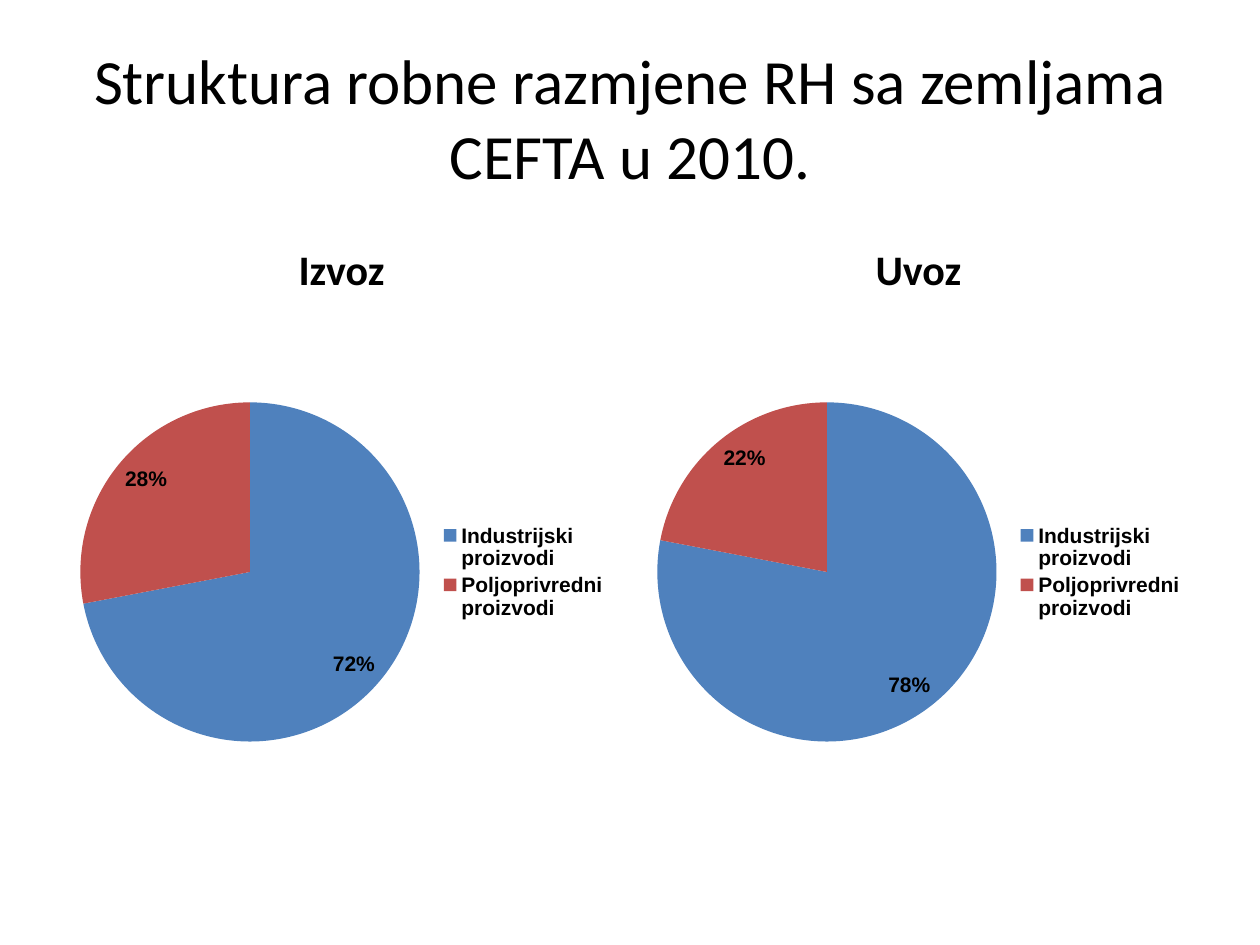
import pptx
import pptx.chart.data
import pptx.dml.color
import pptx.enum.chart
import pptx.enum.text
import pptx.util

PX = 914400 // 126
LEFT, COLUMN_W, COLUMN_STEP = 63, 557, 577
CATEGORIES = ["Industrijski proizvodi", "Poljoprivredni proizvodi"]
SLICE_COLORS = ["4F81BD", "C0504D"]
COLUMNS = [("Izvoz", (72, 28)), ("Uvoz", (78, 22))]


def px(*lengths):
    return [pptx.util.Emu(n * PX) for n in lengths]


def rgb(value):
    return pptx.dml.color.RGBColor.from_string(value)


def style_font(font, name, size, bold=False):
    font.name = name
    font.size = pptx.util.Pt(size)
    font.bold = bold
    font.color.rgb = rgb("000000")


def fill_placeholder(sp, box, text, size, anchor, bold=False):
    sp.left, sp.top, sp.width, sp.height = px(*box)
    tf = sp.text_frame
    tf.text = text
    tf.vertical_anchor = anchor
    tf.auto_size = pptx.enum.text.MSO_AUTO_SIZE.NONE
    p = tf.paragraphs[0]
    p.alignment = pptx.enum.text.PP_ALIGN.CENTER
    p.space_before = pptx.util.Pt(0)
    style_font(p.font, "Calibri", size, bold)


def add_pie(s, box, values):
    data = pptx.chart.data.CategoryChartData(number_format="General")
    data.categories = CATEGORIES
    data.add_series("Series 1", values)
    chart = s.shapes.add_chart(
        pptx.enum.chart.XL_CHART_TYPE.PIE, *px(*box), data).chart
    style_font(chart.font, "Calibri", 10)
    chart.has_title = False

    chart.has_legend = True
    legend = chart.legend
    legend.position = pptx.enum.chart.XL_LEGEND_POSITION.RIGHT
    legend.include_in_layout = False
    style_font(legend.font, "Arial", 12, True)

    plot = chart.plots[0]
    plot.vary_by_categories = True
    for i, color in enumerate(SLICE_COLORS):
        fill = plot.series[0].points[i].format.fill
        fill.solid()
        fill.fore_color.rgb = rgb(color)

    plot.has_data_labels = True
    labels = plot.data_labels
    labels.show_value = False
    labels.show_percentage = True
    labels.number_format = "0%"
    labels.number_format_is_linked = False
    labels.position = pptx.enum.chart.XL_LABEL_POSITION.INSIDE_END
    style_font(labels.font, "Arial", 12, True)


def main():
    prs = pptx.Presentation()
    prs.slide_width, prs.slide_height = px(1260, 945)
    s = prs.slides.add_slide(prs.slide_layouts.get_by_name("Comparison"))
    anchors = pptx.enum.text.MSO_ANCHOR
    fill_placeholder(s.shapes.title, (LEFT, 38, 1134, 158),
                     "Struktura robne razmjene RH sa zemljama CEFTA u 2010.",
                     36, anchors.MIDDLE)

    _, left_head, left_content, right_head, right_content = s.placeholders
    for sp in (left_content, right_content):
        sp.element.getparent().remove(sp.element)

    for i, (head, (name, values)) in enumerate(
            zip((left_head, right_head), COLUMNS)):
        x = LEFT + i * COLUMN_STEP
        fill_placeholder(head, (x, 212, COLUMN_W, 88), name,
                         24, anchors.BOTTOM, bold=True)
        add_pie(s, (x, 300, COLUMN_W, 544), values)

    prs.save("out.pptx")


if __name__ == "__main__":
    main()
